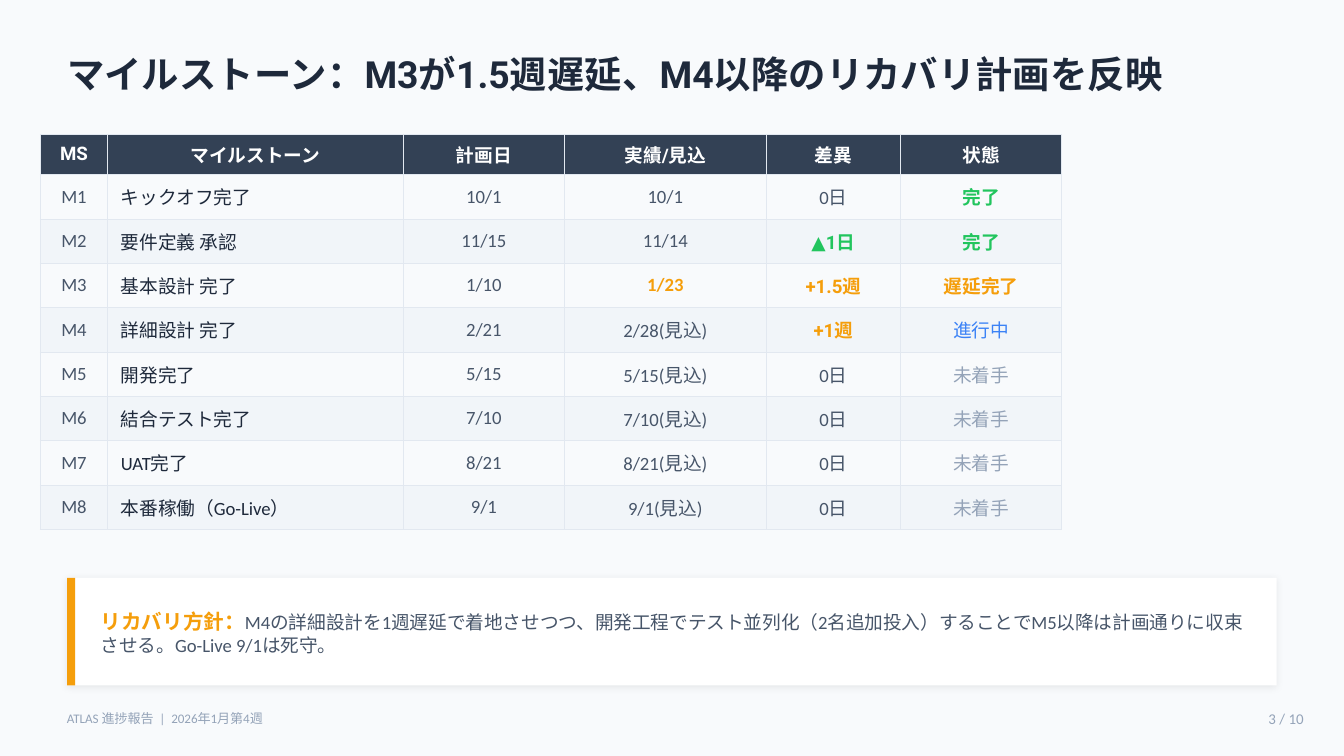
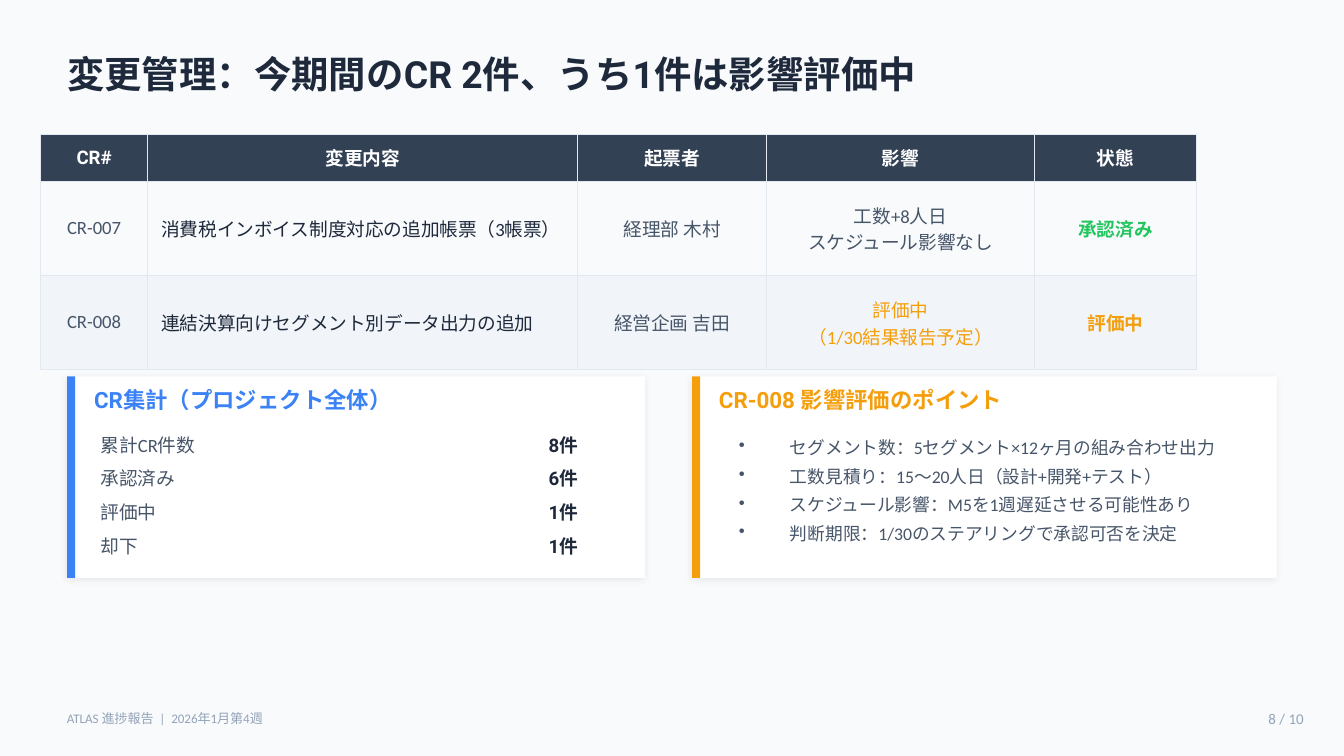
from lxml.etree import SubElement as Sub
from pptx import Presentation
from pptx.dml.color import RGBColor as Rgb
from pptx.enum.shapes import MSO_SHAPE as Shape
from pptx.enum.text import MSO_ANCHOR as Anchor, PP_ALIGN as Align
from pptx.oxml.ns import qn
from pptx.util import Inches, Pt

COLORS = {
    "page": "F8FAFC", "ink": "1E293B", "head": "334155", "slate": "475569",
    "mute": "94A3B8", "line": "E2E8F0", "band": "F1F5F9", "white": "FFFFFF",
    "green": "22C55E", "amber": "F59E0B", "blue": "3B82F6", "black": "000000",
}
HEAD, BODY = "Roboto", "Calibri"

# The slide is a grid of 100 columns by 56.25 rows; all boxes use its units.
UNIT = Inches(0.1)
COLS, ROWS = 100, 56.25
LEFT, SPAN, BAR = 5, 90, 0.6
TOTAL = 10
FOOT = "ATLAS 進捗報告  |  2026年1月第4週"

# Cell styles; a cell is plain text or (text, style).
GOOD = dict(font=HEAD, color="green", bold=True)
LATE = dict(font=HEAD, color="amber", bold=True)
BUSY = dict(font=HEAD, color="blue")
IDLE = dict(font=HEAD, color="mute")
WARN = dict(color="amber", bold=True)

DONE, WAIT = ("完了", GOOD), ("未着手", IDLE)

STONES = {
    "title": "マイルストーン：M3が1.5週遅延、M4以降のリカバリ計画を反映",
    "page": 3,
    "cols": [5, 22, 12, 15, 10, 12],
    "rows": (3, 3.3),
    "cells": [
        ("MS", "マイルストーン", "計画日", "実績/見込", "差異", "状態"),
        ("M1", "キックオフ完了", "10/1", "10/1", "0日", DONE),
        ("M2", "要件定義 承認", "11/15", "11/14", ("▲1日", GOOD), DONE),
        ("M3", "基本設計 完了", "1/10", ("1/23", WARN), ("+1.5週", LATE),
         ("遅延完了", LATE)),
        ("M4", "詳細設計 完了", "2/21", "2/28(見込)", ("+1週", LATE),
         ("進行中", BUSY)),
        ("M5", "開発完了", "5/15", "5/15(見込)", "0日", WAIT),
        ("M6", "結合テスト完了", "7/10", "7/10(見込)", "0日", WAIT),
        ("M7", "UAT完了", "8/21", "8/21(見込)", "0日", WAIT),
        ("M8", "本番稼働（Go-Live）", "9/1", "9/1(見込)", "0日", WAIT),
    ],
}
POLICY = [
    ("リカバリ方針：", dict(font=HEAD, size=11, color="amber", bold=True)),
    ("M4の詳細設計を1週遅延で着地させつつ、開発工程でテスト並列化（2名追加投入）"
     "することでM5以降は計画通りに収束させる。Go-Live 9/1は死守。", {}),
]

CHANGES = {
    "title": "変更管理：今期間のCR 2件、うち1件は影響評価中",
    "page": 8,
    "cols": [8, 32, 14, 20, 12],
    "rows": (3.5, 7),
    "cells": [
        ("CR#", "変更内容", "起票者", "影響", "状態"),
        ("CR-007", "消費税インボイス制度対応の追加帳票（3帳票）", "経理部 木村",
         "工数+8人日\nスケジュール影響なし",
         ("承認済み", dict(color="green", bold=True))),
        ("CR-008", "連結決算向けセグメント別データ出力の追加", "経営企画 吉田",
         ("評価中\n（1/30結果報告予定）", dict(color="amber")),
         ("評価中", WARN)),
    ],
}
COUNTS = [("累計CR件数", "8件"), ("承認済み", "6件"), ("評価中", "1件"),
          ("却下", "1件")]
POINTS = [
    "セグメント数：5セグメント×12ヶ月の組み合わせ出力",
    "工数見積り：15〜20人日（設計+開発+テスト）",
    "スケジュール影響：M5を1週遅延させる可能性あり",
    "判断期限：1/30のステアリングで承認可否を決定",
]


def rgb(name):
    return Rgb.from_string(COLORS[name])


def grid(*units):
    return [round(u * UNIT) for u in units]


def paint(fill, name):
    fill.solid()
    fill.fore_color.rgb = rgb(name)


def write(frame, text, font=BODY, size=10, color="slate", bold=False,
          align=Align.LEFT, after=None, bullet=None):
    """Fill a frame; text is lines split by newline, or (text, style) runs."""
    base = dict(font=font, size=size, color=color, bold=bold)
    lines = ([[(line, {})] for line in text.split("\n")]
             if isinstance(text, str) else [text])
    for i, runs in enumerate(lines):
        para = frame.add_paragraph() if i else frame.paragraphs[0]
        para.alignment = align
        if after:
            para.space_after = Pt(after)
        if bullet:
            props = para._p.get_or_add_pPr()
            props.set("marL", str(Inches(0.38)))
            props.set("indent", str(-Inches(0.38)))
            Sub(props, qn("a:buChar"), char=bullet)
        for words, style in runs:
            look = {**base, **style}
            run = para.add_run()
            run.text = words
            run.font.name = look["font"]
            run.font.size = Pt(look["size"])
            run.font.bold = look["bold"]
            run.font.color.rgb = rgb(look["color"])


def label(slide, box, text, inset=False, **style):
    frame = slide.shapes.add_textbox(*grid(*box)).text_frame
    frame.word_wrap = True
    frame.vertical_anchor = Anchor.MIDDLE
    if not inset:
        frame.margin_left = frame.margin_right = 0
        frame.margin_top = frame.margin_bottom = 0
    write(frame, text, **style)


def block(slide, box, color):
    shape = slide.shapes.add_shape(Shape.RECTANGLE, *grid(*box))
    shape.shadow.inherit = False
    paint(shape.fill, color)
    shape.line.fill.background()
    return shape


def card(slide, left, top, width, height, color):
    """White panel with a soft shadow and a coloured bar at its left."""
    panel = block(slide, (left, top, width, height), "white")
    effects = panel._element.spPr.find(qn("a:effectLst"))
    shade = Sub(effects, qn("a:outerShdw"), blurRad=str(Pt(4)),
                dist=str(Pt(1)), dir=str(135 * 60000), algn="bl",
                rotWithShape="0")
    tint = Sub(shade, qn("a:srgbClr"), val=COLORS["black"])
    Sub(tint, qn("a:alpha"), val="8000")
    block(slide, (left, top, BAR, height), color)


def edge(cell):
    props = cell._tc.get_or_add_tcPr()
    for i, side in enumerate(("lnL", "lnR", "lnT", "lnB")):
        line = props.makeelement(qn("a:" + side), {"w": str(Pt(0.5))})
        Sub(Sub(line, qn("a:solidFill")), qn("a:srgbClr"), val=COLORS["line"])
        props.insert(i, line)


def table(slide, data):
    cells, cols = data["cells"], data["cols"]
    first, rest = data["rows"]
    high = [first] + [rest] * (len(cells) - 1)
    grid_box = grid(3, 10, sum(cols), sum(high))
    tab = slide.shapes.add_table(len(cells), len(cols), *grid_box).table
    tab.horz_banding = False
    for col, width in zip(tab.columns, grid(*cols)):
        col.width = width
    for r, (row, height) in enumerate(zip(tab.rows, grid(*high))):
        row.height = height
        for c, item in enumerate(cells[r]):
            text, style = (item, {}) if isinstance(item, str) else item
            cell = tab.cell(r, c)
            cell.vertical_anchor = Anchor.MIDDLE
            look = dict(align=Align.CENTER)
            if r == 0:
                look.update(font=HEAD, color="white", bold=True)
            elif c == 1:
                look.update(align=Align.LEFT, color="ink")
            write(cell.text_frame, text, **{**look, **style})
            if r == 0 or r % 2 == 0:
                paint(cell.fill, "band" if r else "head")
            else:
                cell.fill.background()
            edge(cell)


def start(deck, data):
    """Add a slide with its background, title, table and footer."""
    slide = deck.slides.add_slide(deck.slide_layouts[6])
    paint(slide.background.fill, "page")
    label(slide, (LEFT, 3, SPAN, 5), data["title"], font=HEAD, size=20,
          color="ink", bold=True)
    table(slide, data)
    label(slide, (91, 52.2, 7, 2.5), f"{data['page']} / {TOTAL}", inset=True,
          size=8, color="mute", align=Align.RIGHT)
    label(slide, (4, 52.2, 40, 2.5), FOOT, inset=True, size=7, color="mute")
    return slide


def stones(deck):
    slide = start(deck, STONES)
    card(slide, LEFT, 43, SPAN, 8, "amber")
    label(slide, (7.5, 43.8, 85, 6.5), POLICY)


def changes(deck):
    slide = start(deck, CHANGES)
    top, right = 28, 51.5
    panels = [(LEFT, 43, "blue", "CR集計（プロジェクト全体）"),
              (right, 43.5, "amber", "CR-008 影響評価のポイント")]
    for left, width, color, head in panels:
        card(slide, left, top, width, 15, color)
        label(slide, (left + 2, top + 0.5, width - 4.5, 2.5), head,
              font=HEAD, size=12, color=color, bold=True)
    for i, (name, count) in enumerate(COUNTS):
        y = top + 4 + 2.5 * i
        label(slide, (LEFT + 2.5, y, 20, 2.2), name)
        label(slide, (LEFT + 23, y, 15, 2.2), count, font=HEAD, color="ink",
              bold=True, align=Align.RIGHT)
    label(slide, (right + 2.5, top + 3.5, 39, 10), "\n".join(POINTS),
          inset=True, size=9.5, after=4, bullet="•")


def main():
    deck = Presentation()
    deck.slide_width, deck.slide_height = grid(COLS, ROWS)
    stones(deck)
    changes(deck)
    deck.save("out.pptx")


if __name__ == "__main__":
    main()
